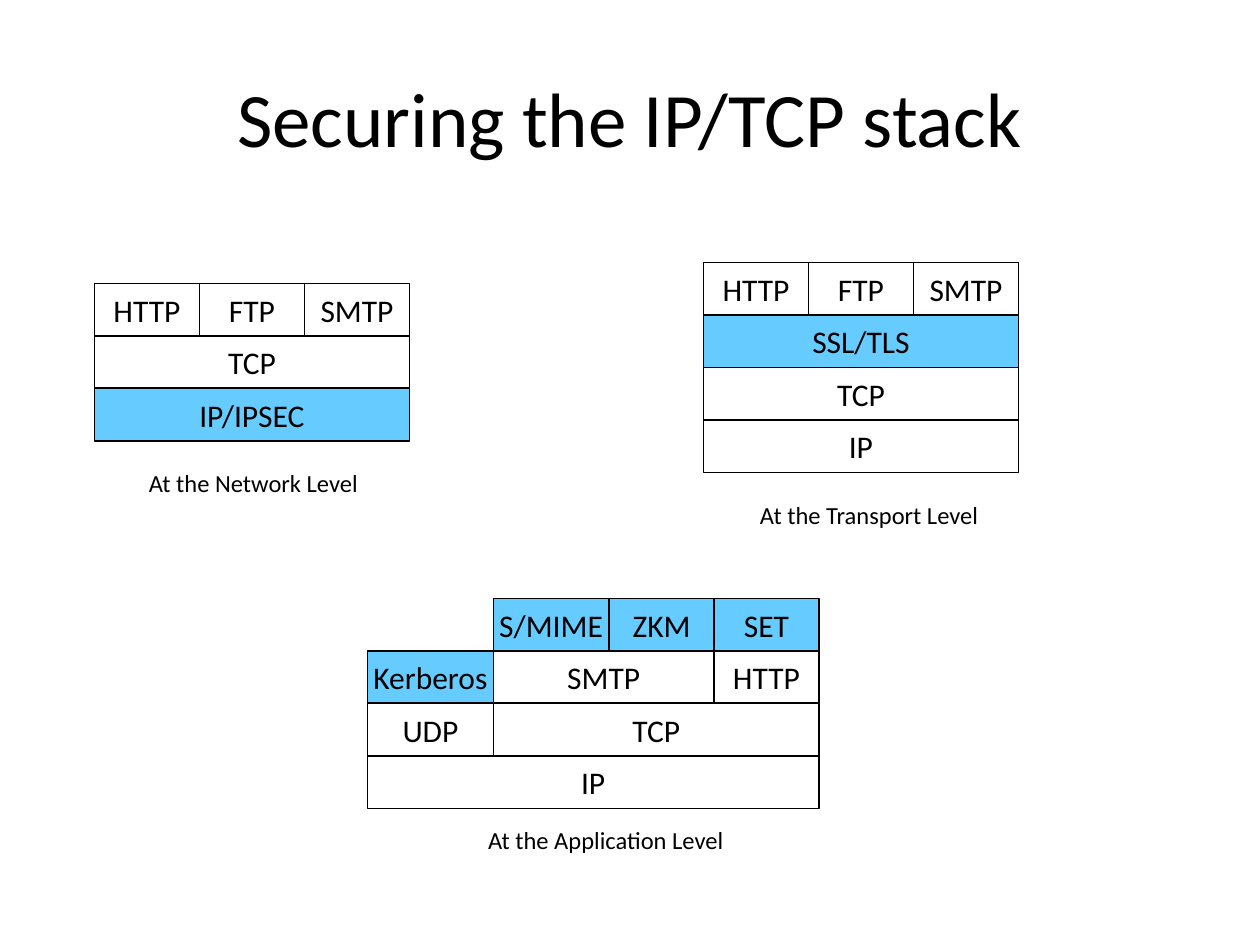
import pptx
import pptx.dml.color
import pptx.enum.shapes
import pptx.enum.text
import pptx.util

SCALE = 7620  # EMU per px, 120 px to the inch
ROW_HEIGHT = 50
FONT = "Calibri"
COLOURS = {"ink": "000000", "secured": "66CCFF"}
ALIGN = pptx.enum.text.PP_ALIGN
ANCHOR = pptx.enum.text.MSO_ANCHOR


def emu(*lengths):
    return [pptx.util.Emu(length * SCALE) for length in lengths]


def colour(name):
    return pptx.dml.color.RGBColor.from_string(COLOURS[name])


def write(shape, text, size, align, anchor, wrap=False):
    frame = shape.text_frame
    frame.text = text
    frame.word_wrap = wrap
    frame.vertical_anchor = anchor
    para = frame.paragraphs[0]
    para.alignment = align
    span = para.runs[0]
    span.font.name = FONT
    span.font.size = pptx.util.Pt(size)
    span.font.color.rgb = colour("ink")


def add_title(page, box, text):
    title = page.shapes.add_textbox(*emu(*box))
    write(title, text, 44, ALIGN.CENTER, ANCHOR.MIDDLE, wrap=True)


def add_layer(page, box, text, secured):
    layer = page.shapes.add_shape(pptx.enum.shapes.MSO_SHAPE.RECTANGLE, *emu(*box))
    layer.shadow.inherit = False
    if secured:
        layer.fill.solid()
        layer.fill.fore_color.rgb = colour("secured")
    else:
        layer.fill.background()
    layer.line.color.rgb = colour("ink")
    layer.line.width = pptx.util.Pt(1)
    write(layer, text, 18, ALIGN.CENTER, ANCHOR.MIDDLE)


def add_caption(page, box, text):
    caption = page.shapes.add_textbox(*emu(*box))
    write(caption, text, 14, ALIGN.LEFT, ANCHOR.TOP)
    caption.text_frame.auto_size = pptx.enum.text.MSO_AUTO_SIZE.SHAPE_TO_FIT_TEXT


def add_stack(page, left, top, columns, rows, secured, caption, caption_box):
    """Rows hold (text, first column, end column); caption_box is relative."""
    edges = [sum(columns[:index]) for index in range(len(columns) + 1)]
    for index, row in enumerate(rows):
        for text, first, end in row:
            box = (left + edges[first], top + index * ROW_HEIGHT,
                   edges[end] - edges[first], ROW_HEIGHT)
            add_layer(page, box, text, text in secured)
    x, gap, width, height = caption_box
    caption_top = top + len(rows) * ROW_HEIGHT + gap
    add_caption(page, (left + x, caption_top, width, height), caption)


def main():
    deck = pptx.Presentation()
    deck.slide_width, deck.slide_height = emu(1200, 900)
    page = deck.slides.add_slide(deck.slide_layouts[6])
    add_title(page, (60, 36, 1080, 150), "Securing the IP/TCP stack")

    thirds = [100, 100, 100]
    applications = [("HTTP", 0, 1), ("FTP", 1, 2), ("SMTP", 2, 3)]

    # Network level
    add_stack(page, 90, 270, thirds,
              [applications, [("TCP", 0, 3)], [("IP/IPSEC", 0, 3)]],
              {"IP/IPSEC"}, "At the Network Level", (40, 20, 228, 40))

    # Transport level
    add_stack(page, 670, 250, thirds,
              [applications, [("SSL/TLS", 0, 3)], [("TCP", 0, 3)], [("IP", 0, 3)]],
              {"SSL/TLS"}, "At the Transport Level", (42, 20, 238, 40))

    # Application level
    add_stack(page, 350, 570, [120, 110, 100, 100],
              [[("S/MIME", 1, 2), ("ZKM", 2, 3), ("SET", 3, 4)],
               [("Kerberos", 0, 1), ("SMTP", 1, 3), ("HTTP", 3, 4)],
               [("UDP", 0, 1), ("TCP", 1, 4)],
               [("IP", 0, 4)]],
              {"S/MIME", "ZKM", "SET", "Kerberos"},
              "At the Application Level", (103, 10, 257, 40))

    deck.save("out.pptx")


if __name__ == "__main__":
    main()
